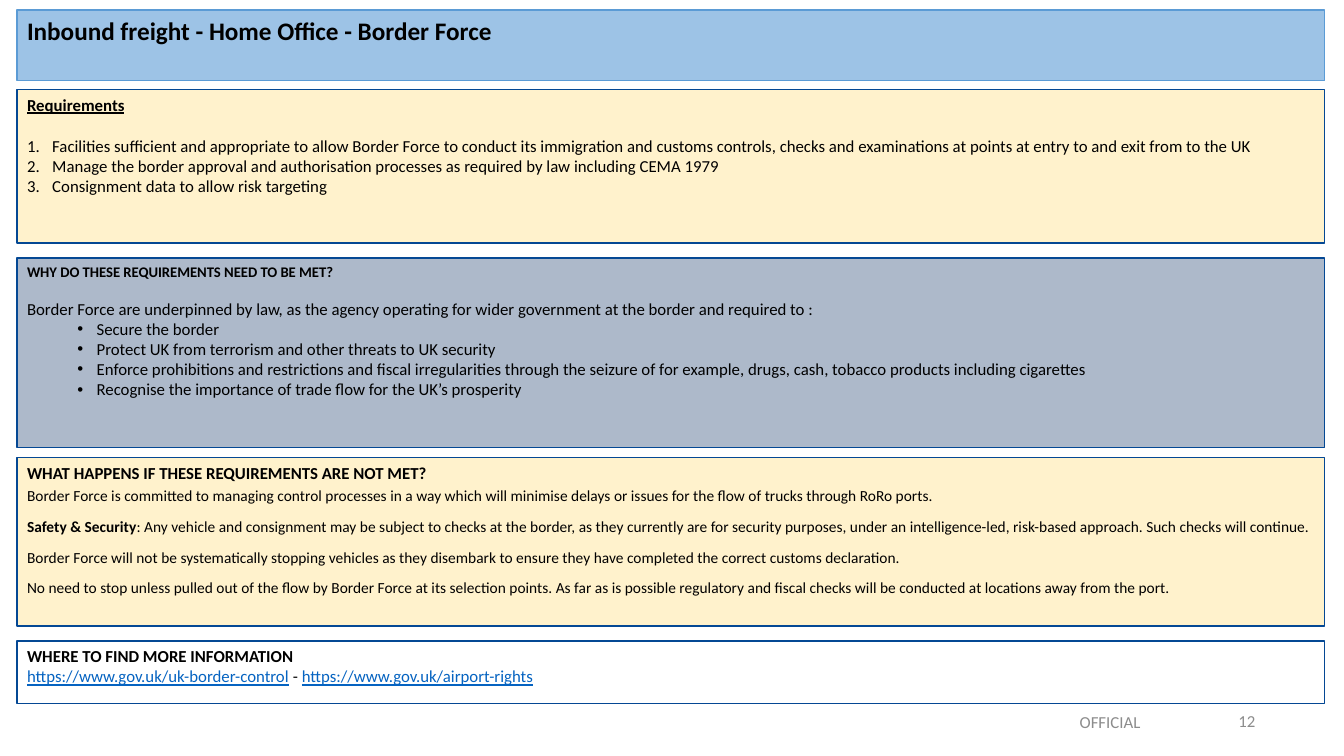
from dataclasses import dataclass
from typing import Optional

from lxml import etree
from pptx import Presentation
from pptx import util as u
from pptx.dml.color import RGBColor
from pptx.enum import shapes, text
from pptx.oxml import ns

BLACK = RGBColor(0x00, 0x00, 0x00)
WHITE = RGBColor(0xFF, 0xFF, 0xFF)
GREY = RGBColor(0x8C, 0x8C, 0x8C)
NAVY = RGBColor(0x04, 0x48, 0x94)
BLUE = RGBColor(0x5B, 0x9B, 0xD5)
LIGHT_BLUE = RGBColor(0x9D, 0xC3, 0xE6)
CREAM = RGBColor(0xFF, 0xF2, 0xCC)
SLATE = RGBColor(0xAD, 0xB9, 0xCA)
LINK = RGBColor(0x05, 0x63, 0xC1)

FONT = "Calibri"
PANEL_LEFT, PANEL_WIDTH = 0.17, 12.97
LEFT, CENTER, RIGHT = text.PP_ALIGN.LEFT, text.PP_ALIGN.CENTER, text.PP_ALIGN.RIGHT
JUSTIFY = text.PP_ALIGN.JUSTIFY


@dataclass(frozen=True)
class Span:
    words: str
    bold: bool = False
    underline: bool = False
    color: RGBColor = BLACK


@dataclass(frozen=True)
class Style:
    size: float = 12
    align: text.PP_ALIGN = LEFT
    level: int = 0
    margin: float = 0
    hanging: float = 0
    line_spacing: float = 1.0
    space_after: float = 0
    bullet: Optional[tuple[str, str, str]] = None  # tag, attribute, value


@dataclass(frozen=True)
class Line:
    spans: tuple[Span, ...]
    style: Style = Style()


@dataclass(frozen=True)
class Panel:
    top: float
    height: float
    fill: RGBColor
    lines: tuple[Line, ...]
    border: RGBColor = NAVY


@dataclass(frozen=True)
class FooterLabel:
    words: str
    left: float
    top: float
    width: float
    align: text.PP_ALIGN


NUMBERED = Style(margin=0.25, hanging=0.25, bullet=("a:buAutoNum", "type", "arabicPeriod"))
BULLETED = Style(align=JUSTIFY, level=1, margin=0.69, hanging=0.19, bullet=("a:buChar", "char", "•"))
CONSEQUENCE = Style(size=11, level=1, margin=0.31, hanging=0.31, line_spacing=1.2, space_after=6)


def heading(words: str, size: float = 12, space_after: float = 0, underline: bool = False) -> Line:
    return Line((Span(words, True, underline),), Style(size=size, space_after=space_after))


def plain(words: str, style: Style) -> Line:
    return Line((Span(words),), style)


def link(address: str) -> Span:
    return Span(address, underline=True, color=LINK)


PANELS = (
    Panel(0.1, 0.7, LIGHT_BLUE, (heading("Inbound freight - Home Office - Border Force", 18),), BLUE),
    Panel(0.89, 1.52, CREAM, (
        heading("Requirements", space_after=14.6, underline=True),
        plain("Facilities sufficient and appropriate to allow Border Force to conduct its immigration and "
              "customs controls, checks and examinations at points at entry to and exit from to the UK", NUMBERED),
        plain("Manage the border approval and authorisation processes as required by law including CEMA 1979",
              NUMBERED),
        plain("Consignment data to allow risk targeting", NUMBERED),
    )),
    Panel(2.56, 1.88, SLATE, (
        heading("WHY DO THESE REQUIREMENTS NEED TO BE MET?", 10.5, 12.8),
        plain("Border Force are underpinned by law, as the agency operating for wider government at the "
              "border and required to :", Style(align=JUSTIFY)),
        plain("Secure the border", BULLETED),
        plain("Protect UK from terrorism and other threats to UK security", BULLETED),
        plain("Enforce prohibitions and restrictions and fiscal irregularities through the seizure of for "
              "example, drugs, cash, tobacco products including cigarettes", BULLETED),
        plain("Recognise the importance of trade flow for the UK’s prosperity", BULLETED),
    )),
    Panel(4.54, 1.67, CREAM, (
        heading("WHAT HAPPENS IF THESE REQUIREMENTS ARE NOT MET?"),
        plain("Border Force is committed to managing control processes in a way which will minimise delays "
              "or issues for the flow of trucks through RoRo ports.", CONSEQUENCE),
        Line((Span("Safety & Security", bold=True),
              Span(": Any vehicle and consignment may be subject to checks at the border, as they currently "
                   "are for security purposes, under an intelligence-led, risk-based approach. Such checks "
                   "will continue.")), CONSEQUENCE),
        plain("Border Force will not be systematically stopping vehicles as they disembark to ensure they "
              "have completed the correct customs declaration.", CONSEQUENCE),
        plain("No need to stop unless pulled out of the flow by Border Force at its selection points. As far "
              "as is possible regulatory and fiscal checks will be conducted at locations away from the port.",
              CONSEQUENCE),
    )),
    Panel(6.36, 0.62, WHITE, (
        heading("WHERE TO FIND MORE INFORMATION"),
        Line((link("https://www.gov.uk/uk-border-control"), Span(" - "),
              link("https://www.gov.uk/airport-rights"))),
    )),
)

FOOTER = (
    FooterLabel("12", 12.1, 6.95, 0.45, RIGHT),
    FooterLabel("OFFICIAL", 8.76, 6.96, 4.5, CENTER),
)


def write_line(paragraph, line: Line) -> None:
    style = line.style
    paragraph.alignment = style.align
    paragraph.level = style.level
    paragraph.line_spacing = style.line_spacing
    paragraph.space_after = u.Pt(style.space_after)
    properties = paragraph._p.get_or_add_pPr()
    properties.set("marL", str(u.Inches(style.margin)))
    properties.set("indent", str(u.Inches(-style.hanging)))
    if style.bullet:
        tag, attribute, value = style.bullet
        if tag == "a:buChar":
            etree.SubElement(properties, ns.qn("a:buFont")).set("typeface", "Arial")
        etree.SubElement(properties, ns.qn(tag)).set(attribute, value)
    for span in line.spans:
        run = paragraph.add_run()
        run.text = span.words
        run.font.name = FONT
        run.font.size = u.Pt(style.size)
        run.font.bold = span.bold
        run.font.underline = span.underline
        run.font.color.rgb = span.color


def draw_panel(slide, panel: Panel) -> None:
    shape = slide.shapes.add_shape(
        shapes.MSO_SHAPE.RECTANGLE, u.Inches(PANEL_LEFT), u.Inches(panel.top),
        u.Inches(PANEL_WIDTH), u.Inches(panel.height))
    shape.shadow.inherit = False
    shape.fill.solid()
    shape.fill.fore_color.rgb = panel.fill
    shape.line.color.rgb = panel.border
    shape.line.width = u.Pt(1)
    frame = shape.text_frame
    frame.word_wrap = True
    frame.vertical_anchor = text.MSO_ANCHOR.TOP
    for index, line in enumerate(panel.lines):
        write_line(frame.add_paragraph() if index else frame.paragraphs[0], line)


def draw_footer_label(slide, label: FooterLabel) -> None:
    box = slide.shapes.add_textbox(
        u.Inches(label.left), u.Inches(label.top), u.Inches(label.width), u.Inches(0.4))
    frame = box.text_frame
    frame.word_wrap = True
    frame.vertical_anchor = text.MSO_ANCHOR.MIDDLE
    write_line(frame.paragraphs[0], Line((Span(label.words, color=GREY),), Style(align=label.align)))


def main() -> None:
    presentation = Presentation()
    presentation.slide_width = u.Inches(13.33)
    presentation.slide_height = u.Inches(7.5)
    slide = presentation.slides.add_slide(presentation.slide_layouts[6])
    for panel in PANELS:
        draw_panel(slide, panel)
    for label in FOOTER:
        draw_footer_label(slide, label)
    presentation.save("out.pptx")


if __name__ == "__main__":
    main()
